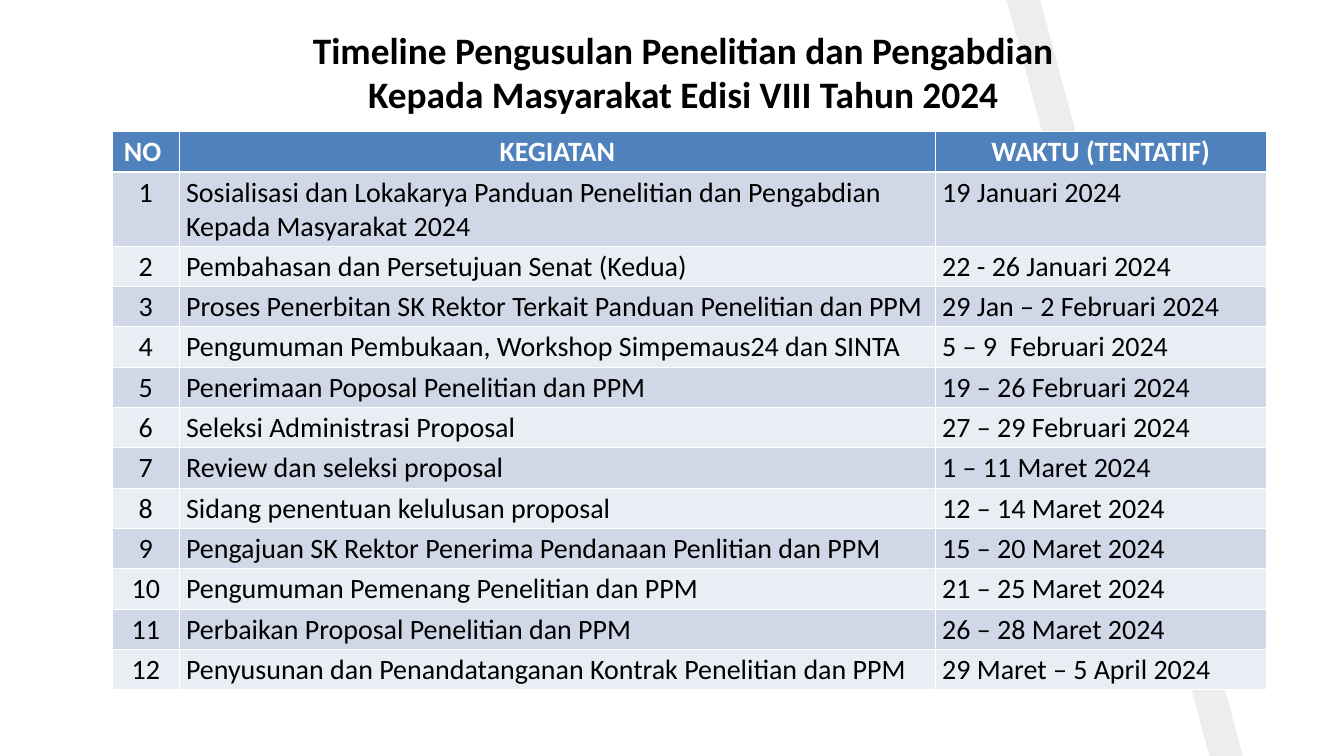
import pptx
import pptx.dml.color
import pptx.enum.text
import pptx.oxml
import pptx.oxml.ns
import pptx.util
from pptx.util import Cm

COLORS = {
    "white": "FFFFFF",
    "black": "000000",
    "header": "4F81BD",
    "odd": "D0D8E8",
    "even": "E9EDF4",
}
FONT = "Calibri"
HEADINGS = ("NO ", "KEGIATAN", "WAKTU (TENTATIF)")
ACTIVITIES = [
    ("Sosialisasi dan Lokakarya Panduan Penelitian dan Pengabdian Kepada Masyarakat 2024",
     "19 Januari 2024"),
    ("Pembahasan dan Persetujuan Senat (Kedua)", "22 - 26 Januari 2024"),
    ("Proses Penerbitan SK Rektor Terkait Panduan Penelitian dan PPM", "29 Jan – 2 Februari 2024"),
    ("Pengumuman Pembukaan, Workshop Simpemaus24 dan SINTA", "5 – 9  Februari 2024"),
    ("Penerimaan Poposal Penelitian dan PPM", "19 – 26 Februari 2024"),
    ("Seleksi Administrasi Proposal", "27 – 29 Februari 2024"),
    ("Review dan seleksi proposal", "1 – 11 Maret 2024"),
    ("Sidang penentuan kelulusan proposal", "12 – 14 Maret 2024"),
    ("Pengajuan SK Rektor Penerima Pendanaan Penlitian dan PPM", "15 – 20 Maret 2024"),
    ("Pengumuman Pemenang Penelitian dan PPM", "21 – 25 Maret 2024"),
    ("Perbaikan Proposal Penelitian dan PPM", "26 – 28 Maret 2024"),
    ("Penyusunan dan Penandatanganan Kontrak Penelitian dan PPM", "29 Maret – 5 April 2024"),
]


def style_text(paragraph, size, color, bold, centered):
    if centered:
        paragraph.alignment = pptx.enum.text.PP_ALIGN.CENTER
    for run in paragraph.runs:
        run.font.name = FONT
        run.font.size = pptx.util.Pt(size)
        run.font.bold = bold
        run.font.color.rgb = pptx.dml.color.RGBColor.from_string(COLORS[color])


def add_borders(cell, bottom_width):
    """Draw white lines round a cell; they must come before its fill."""
    properties = cell._tc.get_or_add_tcPr()
    for side, width in (("L", 1), ("R", 1), ("T", 1), ("B", bottom_width)):
        properties.append(pptx.oxml.parse_xml(
            f'<a:ln{side} {pptx.oxml.ns.nsdecls("a")} w="{pptx.util.Pt(width)}"><a:solidFill>'
            f'<a:srgbClr val="{COLORS["white"]}"/></a:solidFill></a:ln{side}>'))


presentation = pptx.Presentation()
presentation.slide_width = Cm(50.8)
presentation.slide_height = Cm(28.58)
slide = presentation.slides.add_slide(presentation.slide_layouts[6])

# A white panel over a shifted grey one leaves the slanted stripe
for left, color in ((1.27, "black"), (0, "white")):
    outline = slide.shapes.build_freeform(Cm(left), Cm(-0.05))
    outline.add_line_segments([
        (Cm(left), Cm(28.63)),
        (Cm(left + 45.72), Cm(28.63)),
        (Cm(left + 38.05), Cm(0)),
    ])
    panel = outline.convert_to_shape()
    panel.shadow.inherit = False
    panel.line.fill.background()
    panel.fill.solid()
    panel.fill.fore_color.rgb = pptx.dml.color.RGBColor.from_string(COLORS[color])
    if color == "black":
        tint = panel._element.spPr.find(".//" + pptx.oxml.ns.qn("a:srgbClr"))
        tint.append(pptx.oxml.parse_xml(f'<a:alpha {pptx.oxml.ns.nsdecls("a")} val="7000"/>'))

title = slide.shapes.add_textbox(Cm(9.53), Cm(-0.53), Cm(32.59), Cm(5.18)).text_frame
title.word_wrap = True
title.vertical_anchor = pptx.enum.text.MSO_ANCHOR.BOTTOM
title.margin_top = title.margin_bottom = Cm(0.25)
title.text = "Timeline Pengusulan Penelitian dan Pengabdian Kepada Masyarakat Edisi VIII Tahun 2024"
style_text(title.paragraphs[0], 40, "black", True, True)

rows = [HEADINGS] + [(str(number), *activity) for number, activity in enumerate(ACTIVITIES, 1)]
row_height = Cm(1.04)
schedule = slide.shapes.add_table(
    len(rows), len(HEADINGS), Cm(4.24), Cm(4.98), Cm(43.61), row_height * len(rows)).table
for column, width in zip(schedule.columns, (2.54, 28.58, 12.49)):
    column.width = Cm(width)

for row_index, row in enumerate(rows):
    is_header = row_index == 0
    fill = "header" if is_header else "odd" if row_index % 2 else "even"
    for column_index, wording in enumerate(row):
        cell = schedule.cell(row_index, column_index)
        add_borders(cell, 3 if is_header else 1)
        cell.fill.solid()
        cell.fill.fore_color.rgb = pptx.dml.color.RGBColor.from_string(COLORS[fill])
        cell.text_frame.text = wording
        style_text(cell.text_frame.paragraphs[0], 30, "white" if is_header else "black",
                   is_header, is_header or column_index == 0)

presentation.save("out.pptx")
